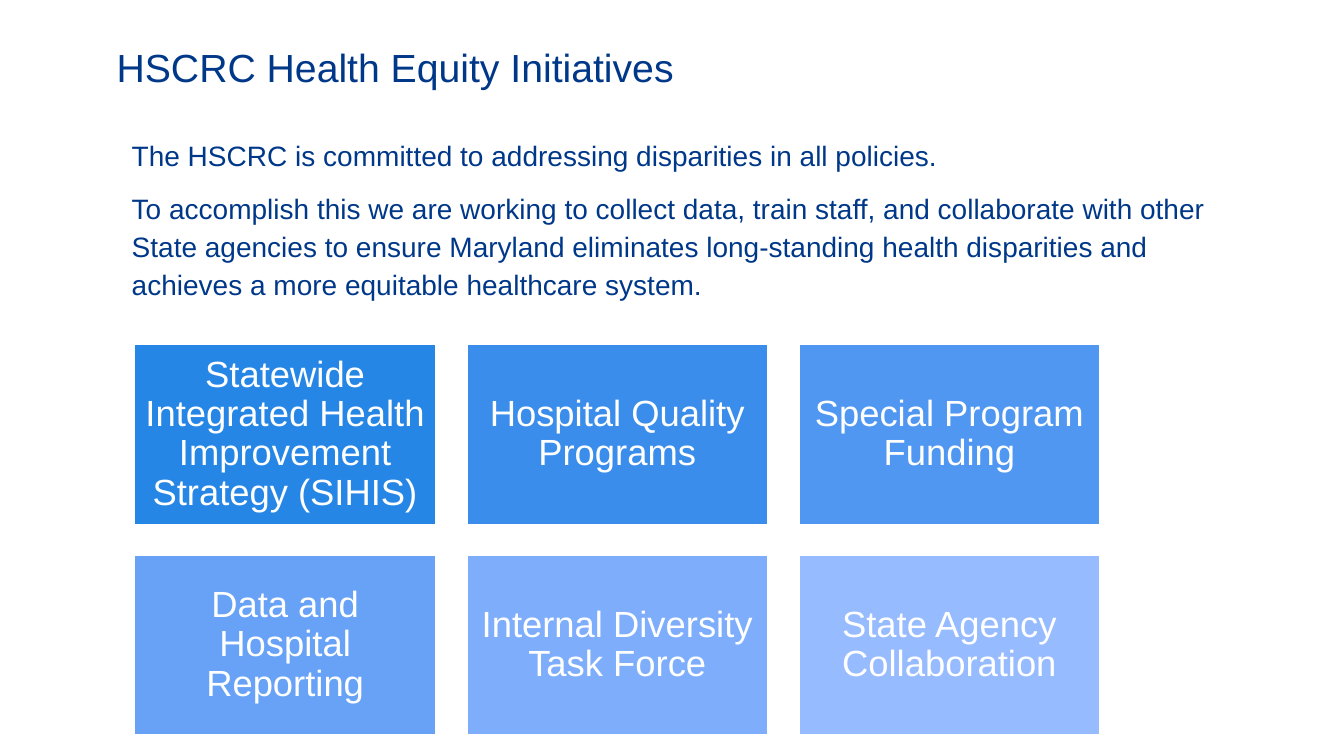
"""Build the HSCRC health equity initiatives slide."""
from dataclasses import dataclass

import pptx
import pptx.dml.color
import pptx.enum.shapes
import pptx.enum.text
import pptx.util

Cm = pptx.util.Cm
Pt = pptx.util.Pt
ALIGN = pptx.enum.text.PP_ALIGN
ANCHOR = pptx.enum.text.MSO_ANCHOR

NAVY = "003889"
WHITE = "FFFFFF"
COLUMNS = 3
GRID_LEFT, GRID_TOP = 3.38, 8.66
CARD_WIDTH, CARD_HEIGHT = 7.62, 4.57
COLUMN_PITCH, ROW_PITCH = 8.37, 5.31


@dataclass(frozen=True)
class Initiative:
    name: str
    fill: str


INITIATIVES = [
    Initiative("Statewide Integrated Health Improvement Strategy (SIHIS)", "2686E6"),
    Initiative("Hospital Quality Programs", "3B8DEC"),
    Initiative("Special Program Funding", "5097F2"),
    Initiative("Data and Hospital Reporting", "67A2F7"),
    Initiative("Internal Diversity Task Force", "7EAEFB"),
    Initiative("State Agency Collaboration", "96BBFE"),
]

COMMITMENT = [
    "The HSCRC is committed to addressing disparities in all policies.",
    "To accomplish this we are working to collect data, train staff, and "
    "collaborate with other State agencies to ensure Maryland eliminates "
    "long-standing health disparities and achieves a more equitable "
    "healthcare system.",
]


def color(value: str) -> pptx.dml.color.RGBColor:
    return pptx.dml.color.RGBColor.from_string(value)


def write(holder, paragraphs: list[str], *, size: float, ink: str = NAVY,
          align=ALIGN.LEFT, anchor=ANCHOR.TOP, side: float = 0.25,
          edge: float = 0.13, spacing: float = 1.0, gap: float = 0) -> None:
    frame = holder.text_frame
    frame.word_wrap = True
    frame.vertical_anchor = anchor
    frame.margin_left = frame.margin_right = Cm(side)
    frame.margin_top = frame.margin_bottom = Cm(edge)
    for index, text in enumerate(paragraphs):
        paragraph = frame.add_paragraph() if index else frame.paragraphs[0]
        paragraph.text = text
        paragraph.alignment = align
        paragraph.line_spacing = spacing
        if index:
            paragraph.space_before = Pt(gap)
        paragraph.font.name = "Arial"
        paragraph.font.size = Pt(size)
        paragraph.font.color.rgb = color(ink)


def draw_initiative(slide, initiative: Initiative, index: int) -> None:
    row, column = divmod(index, COLUMNS)
    card = slide.shapes.add_shape(
        pptx.enum.shapes.MSO_SHAPE.RECTANGLE,
        Cm(GRID_LEFT + column * COLUMN_PITCH), Cm(GRID_TOP + row * ROW_PITCH),
        Cm(CARD_WIDTH), Cm(CARD_HEIGHT))
    card.shadow.inherit = False
    card.fill.solid()
    card.fill.fore_color.rgb = color(initiative.fill)
    card.line.color.rgb = color(WHITE)
    card.line.width = Pt(2)
    write(card, [initiative.name], size=26, ink=WHITE, align=ALIGN.CENTER,
          anchor=ANCHOR.MIDDLE, side=0.27, edge=0.27, spacing=0.9)


def main() -> None:
    presentation = pptx.Presentation()
    presentation.slide_width = Cm(33.87)
    presentation.slide_height = Cm(19.05)
    slide = presentation.slides.add_slide(presentation.slide_layouts[6])

    title = slide.shapes.add_textbox(Cm(2.69), Cm(0.97), Cm(29.21), Cm(2.44))
    write(title, ["HSCRC Health Equity Initiatives"], size=28)

    commitment = slide.shapes.add_textbox(Cm(2.79), Cm(3.25), Cm(29.21), Cm(13.59))
    write(commitment, COMMITMENT, size=20, side=0.53, spacing=1.14, gap=10)

    for index, initiative in enumerate(INITIATIVES):
        draw_initiative(slide, initiative, index)

    presentation.save("out.pptx")


if __name__ == "__main__":
    main()
